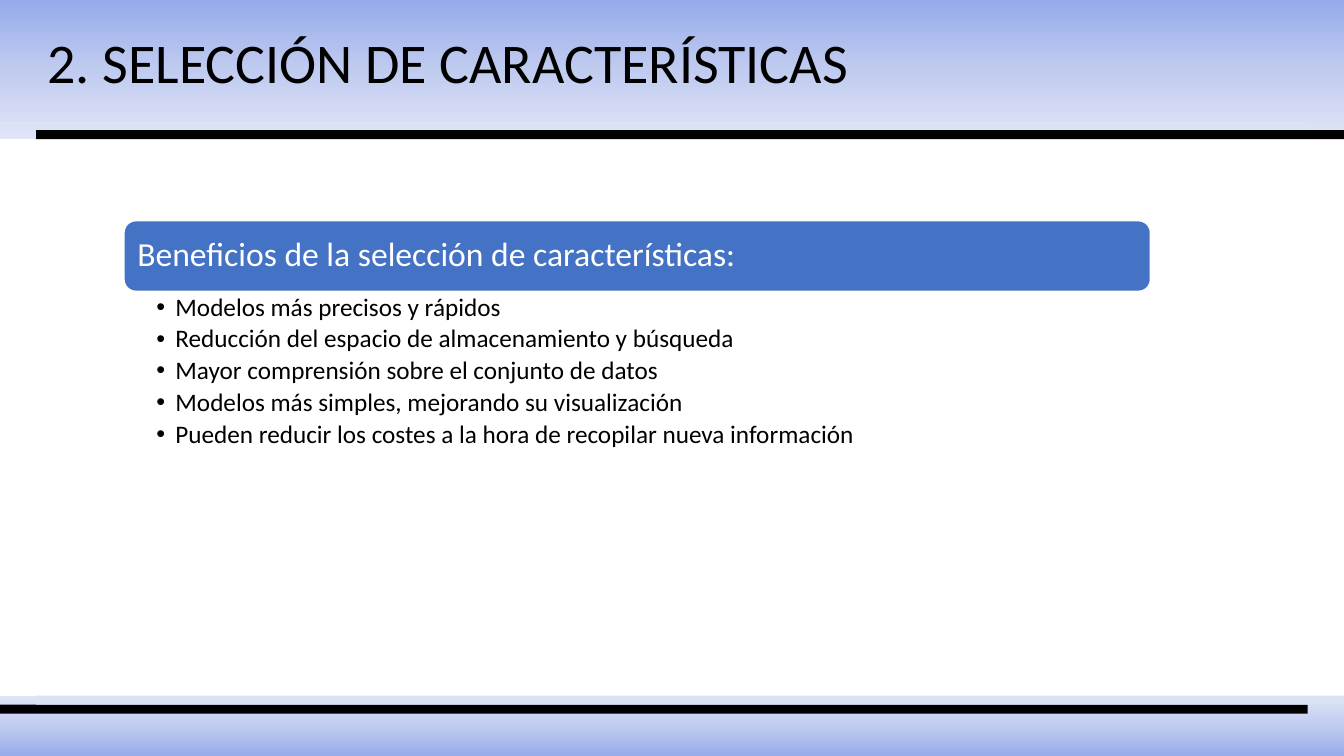
from lxml import etree
from pptx import Presentation
from pptx.dml.color import RGBColor
from pptx.enum.shapes import MSO_SHAPE
from pptx.enum.text import MSO_ANCHOR, MSO_AUTO_SIZE, PP_ALIGN
from pptx.oxml import parse_xml
from pptx.oxml.ns import nsdecls, qn
from pptx.util import Inches, Pt

# Content
TITLE = "2. SELECCIÓN DE CARACTERÍSTICAS"
HEADING = "Beneficios de la selección de características:"
BENEFITS = [
    "Modelos más precisos y rápidos",
    "Reducción del espacio de almacenamiento y búsqueda",
    "Mayor comprensión sobre el conjunto de datos",
    "Modelos más simples, mejorando su visualización",
    "Pueden reducir los costes a la hora de recopilar nueva información",
]

# Style
FONT = "Calibri"
COLORS = {"black": "000000", "white": "FFFFFF", "pale": "DAE3F3", "blue": "4472C4"}
BAND_STOPS = [(0, "96ABEA"), (50, "C0CBF0"), (100, "E0E5F7")]

# Layout, in inches
WIDTH, HEIGHT = 13.33, 7.5
HEADER_H, FOOTER_H = 1.38, 0.6
RULE_H, RULE_INSET = 0.09, 0.36
FOOTER_TOP = HEIGHT - FOOTER_H
BOX_LEFT, BOX_TOP, BOX_W, BOX_H = 1.23, 2.19, 10.18, 0.7
LIST_H, BULLET_INDENT = 1.69, 0.19


def color(name):
    return RGBColor.from_string(COLORS[name])


def place(s, left, top, width, height):
    s.left, s.top, s.width, s.height = map(Inches, (left, top, width, height))


def add_block(slide, kind, box, fill=None):
    s = slide.shapes.add_shape(kind, *map(Inches, box))
    s.shadow.inherit = False
    s.line.fill.background()
    if fill:
        s.fill.solid()
        s.fill.fore_color.rgb = color(fill)
    return s


def add_band(slide, top, height, rotation):
    s = add_block(slide, MSO_SHAPE.RECTANGLE, (0, top, WIDTH, height))
    s.rotation = rotation
    stops = "".join(
        f'<a:gs pos="{pos * 1000}"><a:srgbClr val="{rgb}"/></a:gs>' for pos, rgb in BAND_STOPS
    )
    s.fill.gradient()
    s.fill.gradient_angle = 270
    old = s.fill._xPr.find(qn("a:gradFill")).find(qn("a:gsLst"))
    old.getparent().replace(old, parse_xml(f'<a:gsLst {nsdecls("a")}>{stops}</a:gsLst>'))


def setup_frame(s, insets, anchor):
    tf = s.text_frame
    tf.word_wrap = True
    tf.auto_size = MSO_AUTO_SIZE.NONE
    tf.vertical_anchor = anchor
    tf.margin_left, tf.margin_top, tf.margin_right, tf.margin_bottom = map(Inches, insets)
    return tf


def write(p, text, size, name, line_spacing=0.9, after=0):
    p.alignment = PP_ALIGN.LEFT
    p.line_spacing = line_spacing
    p.space_before, p.space_after = Pt(0), Pt(after)
    r = p.add_run()
    r.text = text
    r.font.name, r.font.size = FONT, Pt(size)
    r.font.color.rgb = color(name)


def add_bullet(p):
    pPr = p._p.get_or_add_pPr()
    pPr.set("marL", str(Inches(BULLET_INDENT)))
    pPr.set("indent", str(-Inches(BULLET_INDENT)))
    etree.SubElement(pPr, qn("a:buFont")).set("typeface", "Arial")
    etree.SubElement(pPr, qn("a:buChar")).set("char", "•")


def main():
    prs = Presentation()
    prs.slide_width, prs.slide_height = Inches(WIDTH), Inches(HEIGHT)
    slide = prs.slides.add_slide(prs.slide_layouts[1])
    title, body = slide.placeholders

    # Gradient bands and their double rules
    add_band(slide, 0, HEADER_H, 0)
    add_band(slide, FOOTER_TOP, FOOTER_H, 180)
    rules = [
        (0, HEADER_H - 2 * RULE_H, "pale"),
        (RULE_INSET, HEADER_H - RULE_H, "black"),
        (0, FOOTER_TOP + RULE_H, "black"),
        (RULE_INSET, FOOTER_TOP, "pale"),
    ]
    for left, top, name in rules:
        add_block(slide, MSO_SHAPE.RECTANGLE, (left, top, WIDTH - RULE_INSET, RULE_H), name)

    # Title, brought in front of the header band
    slide.shapes._spTree.append(title._element)
    place(title, 0.37, 0.22, 8.28, 0.77)
    tf = setup_frame(title, (0.1, 0.05, 0.1, 0.05), MSO_ANCHOR.TOP)
    write(tf.paragraphs[0], TITLE, 40, "black", line_spacing=1.0)

    # Heading box
    box = add_block(slide, MSO_SHAPE.ROUNDED_RECTANGLE, (BOX_LEFT, BOX_TOP, BOX_W, BOX_H), "blue")
    box.line.color.rgb = color("white")
    box.line.width = Pt(1)
    tf = setup_frame(box, (0.1, 0.1, 0.1, 0.1), MSO_ANCHOR.MIDDLE)
    write(tf.paragraphs[0], HEADING, 24, "white")

    # List of benefits
    place(body, BOX_LEFT, BOX_TOP + BOX_H, BOX_W, LIST_H)
    tf = setup_frame(body, (0.32, 0.03, 0.14, 0.03), MSO_ANCHOR.TOP)
    for i, benefit in enumerate(BENEFITS):
        p = tf.add_paragraph() if i else tf.paragraphs[0]
        write(p, benefit, 18, "black", after=3.3)
        add_bullet(p)

    prs.save("out.pptx")


if __name__ == "__main__":
    main()
